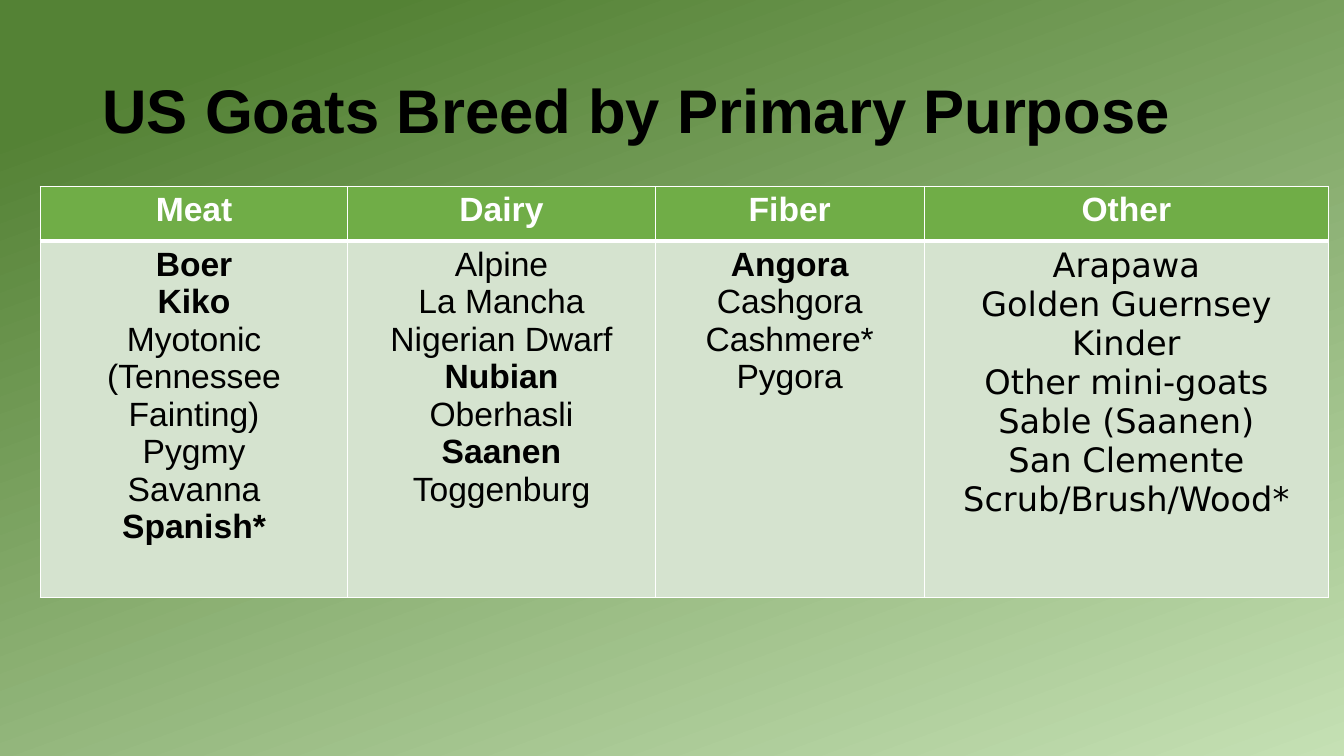
from lxml import etree
from pptx import Presentation
from pptx.dml.color import RGBColor
from pptx.enum.text import MSO_ANCHOR, PP_ALIGN
from pptx.oxml.ns import qn
from pptx.util import Pt

LEFT, CENTER = PP_ALIGN.LEFT, PP_ALIGN.CENTER
MIDDLE = MSO_ANCHOR.MIDDLE

COLORS = {
    "dark": "548235",
    "light": "C5E0B4",
    "head": "70AD47",
    "body": "D5E3CF",
    "white": "FFFFFF",
    "black": "000000",
}

BREEDS = {
    "Meat": ["Boer", "Kiko", "Myotonic", "(Tennessee Fainting)", "Pygmy",
             "Savanna", "Spanish*"],
    "Dairy": ["Alpine", "La Mancha", "Nigerian Dwarf", "Nubian", "Oberhasli",
              "Saanen", "Toggenburg"],
    "Fiber": ["Angora", "Cashgora", "Cashmere*", "Pygora"],
    "Other": ["Arapawa", "Golden Guernsey", "Kinder", "Other mini-goats",
              "Sable (Saanen)", "San Clemente", "Scrub/Brush/Wood*"],
}
BOLD = {"Boer", "Kiko", "Spanish*", "Nubian", "Saanen", "Angora"}
FONTS = {"Other": "DejaVu Sans"}
WIDTHS = [219.6, 219.6, 192.24, 288.72]
HEIGHTS = [38.88, 254.88]


def color(name):
    return RGBColor.from_string(COLORS[name])


def style(para, size, face, tint, bold, align):
    para.alignment = align
    font = para.font
    font.size, font.name, font.bold = Pt(size), face, bold
    font.color.rgb = color(tint)


def paint_back(slide):
    fill = slide.background.fill
    fill.gradient()
    fill.gradient_angle = 290
    for stop, (place, name) in zip(fill.gradient_stops,
                                   [(0.11, "dark"), (1, "light")]):
        stop.position = place
        stop.color.rgb = color(name)


def add_title(slide, text):
    title = slide.shapes.title
    title.left, title.top = Pt(66), Pt(28.8)
    title.width, title.height = Pt(828), Pt(104.4)
    frame = title.text_frame
    frame.text = text
    frame.vertical_anchor = MIDDLE
    para = frame.paragraphs[0]
    para.line_spacing = 0.9
    style(para, 44, "Arial", "black", True, LEFT)


def add_edges(cell, top, bottom):
    props = cell._tc.get_or_add_tcPr()
    for side, width in zip("LRTB", (1, 1, top, bottom)):
        line = etree.SubElement(props, qn(f"a:ln{side}"), w=str(Pt(width)))
        fill = etree.SubElement(line, qn("a:solidFill"))
        etree.SubElement(fill, qn("a:srgbClr"), val=COLORS["white"])


def fill_cell(cell, lines, face, tint, back, bold, edges):
    add_edges(cell, *edges)
    cell.fill.solid()
    cell.fill.fore_color.rgb = color(back)
    cell.text = "\n".join(lines)
    for para, line in zip(cell.text_frame.paragraphs, lines):
        style(para, 24, face, tint, line in bold, CENTER)


def add_breeds(slide):
    frame = slide.shapes.add_table(2, len(BREEDS), Pt(28.8), Pt(133.2),
                                   Pt(sum(WIDTHS)), Pt(sum(HEIGHTS)))
    table = frame.table
    table.horz_banding = False
    for row, height in zip(table.rows, HEIGHTS):
        row.height = Pt(height)
    for col, (group, names) in enumerate(BREEDS.items()):
        table.columns[col].width = Pt(WIDTHS[col])
        fill_cell(table.cell(0, col), [group], "Arial", "white", "head",
                  {group}, (1, 3))
        fill_cell(table.cell(1, col), names, FONTS.get(group, "Arial"),
                  "black", "body", BOLD, (3, 1))


def main():
    deck = Presentation()
    deck.slide_width, deck.slide_height = Pt(960), Pt(540)
    slide = deck.slides.add_slide(deck.slide_layouts[5])
    paint_back(slide)
    add_title(slide, "US Goats Breed by Primary Purpose")
    add_breeds(slide)
    deck.save("out.pptx")


if __name__ == "__main__":
    main()
